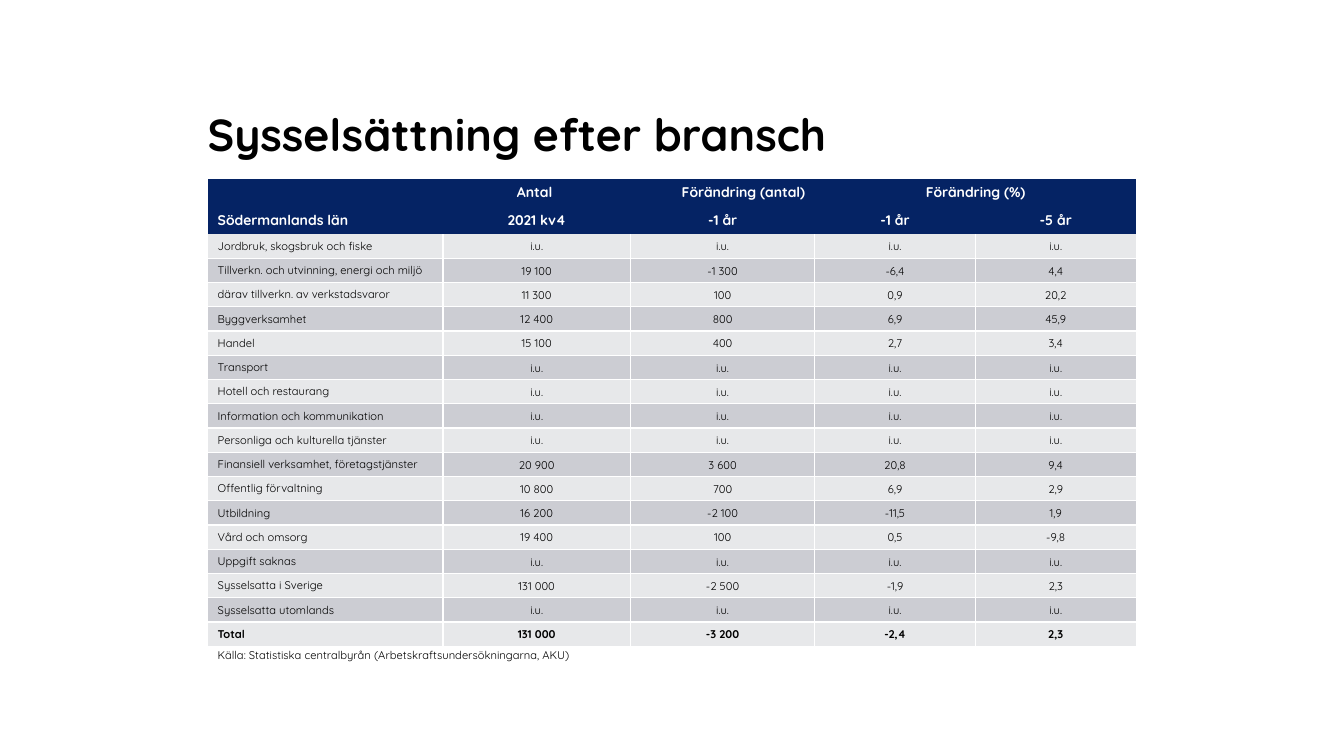
from lxml import etree
from pptx import Presentation
from pptx.dml.color import RGBColor
from pptx.enum import text as t
from pptx.oxml import ns
from pptx.util import Pt

FONT = "Quicksand"
NAVY, LIGHT, GREY = "052364", "E7E8EA", "CCCDD3"
WHITE, BLACK = "FFFFFF", "000000"
LEFT = 148.3
COLS = [168.2, 133.8, 131.8, 114.5, 115.1]
WIDTH = sum(COLS)
HEAD, BODY = 19.8, 17.32
MID, START = t.PP_ALIGN.CENTER, t.PP_ALIGN.LEFT
NONE = ["i.u."] * 4
ROWS = [
    ["", "Antal\tFörändring (antal)", "", "Förändring (%)", ""],
    ["Södermanlands län", "2021 kv4", "-1 år", "-1 år", "-5 år"],
    ["Jordbruk, skogsbruk och fiske", *NONE],
    ["Tillverkn. och utvinning, energi och miljö", "19 100", "-1 300", "-6,4", "4,4"],
    ["därav tillverkn. av verkstadsvaror", "11 300", "100", "0,9", "20,2"],
    ["Byggverksamhet", "12 400", "800", "6,9", "45,9"],
    ["Handel", "15 100", "400", "2,7", "3,4"],
    ["Transport", *NONE],
    ["Hotell och restaurang", *NONE],
    ["Information och kommunikation", *NONE],
    ["Personliga och kulturella tjänster", *NONE],
    ["Finansiell verksamhet, företagstjänster", "20 900", "3 600", "20,8", "9,4"],
    ["Offentlig förvaltning", "10 800", "700", "6,9", "2,9"],
    ["Utbildning", "16 200", "-2 100", "-11,5", "1,9"],
    ["Vård och omsorg", "19 400", "100", "0,5", "-9,8"],
    ["Uppgift saknas", *NONE],
    ["Sysselsatta i Sverige", "131 000", "-2 500", "-1,9", "2,3"],
    ["Sysselsatta utomlands", *NONE],
    ["Total", "131 000", "-3 200", "-2,4", "2,3"],
]


def color(code):
    return RGBColor.from_string(code)


def assign(item, values):
    for key, value in values.items():
        setattr(item, key, value)


def write(frame, words, size, code=BLACK, bold=False, align=START):
    para = frame.paragraphs[0]
    para.alignment = align
    if words:
        run = para.add_run()
        run.text = words
        assign(run.font, {"name": FONT, "size": Pt(size), "bold": bold})
        run.font.color.rgb = color(code)
    else:
        end = etree.SubElement(para._p, ns.qn("a:endParaRPr"))
        end.set("sz", str(size * 100))


def border(cell, sides, code=None):
    props = cell._tc.get_or_add_tcPr()
    for side in sides:
        line = etree.SubElement(props, ns.qn("a:ln" + side))
        line.set("w", str(Pt(1)))
        if code:
            fill = etree.SubElement(line, ns.qn("a:solidFill"))
            etree.SubElement(fill, ns.qn("a:srgbClr")).set("val", code)
        else:
            etree.SubElement(line, ns.qn("a:noFill"))


def add_tab(para, place):
    tabs = etree.SubElement(para._p.get_or_add_pPr(), ns.qn("a:tabLst"))
    stop = etree.SubElement(tabs, ns.qn("a:tab"))
    stop.set("pos", str(Pt(place)))
    stop.set("algn", "l")


def style(cell, row, col, words):
    head = row < 2
    if head:
        border(cell, "LRTB")
    else:
        border(cell, "LR", WHITE)
        border(cell, "T", None if row == 2 else WHITE)
        border(cell, "B", WHITE)
    cell.fill.solid()
    cell.fill.fore_color.rgb = color(NAVY if head else (LIGHT, GREY)[row % 2])
    if row and col:
        assign(cell, {
            "margin_left": Pt(0.7), "margin_right": Pt(0.7),
            "margin_top": Pt(0.7), "margin_bottom": 0,
            "vertical_anchor": t.MSO_ANCHOR.MIDDLE,
        })
    write(cell.text_frame, words, 10 if head else 8, WHITE if head else BLACK,
          head or row == len(ROWS) - 1, MID if col else START)


def add_grid(slide):
    high = 2 * HEAD + (len(ROWS) - 2) * BODY
    grid = slide.shapes.add_table(len(ROWS), len(COLS), Pt(LEFT), Pt(127.6),
                                  Pt(WIDTH), Pt(high)).table
    assign(grid, {"first_row": False, "horz_banding": False})
    for col, wide in enumerate(COLS):
        grid.columns[col].width = Pt(wide)
    for row, line in enumerate(ROWS):
        grid.rows[row].height = Pt(HEAD if row < 2 else BODY)
        for col, words in enumerate(line):
            style(grid.cell(row, col), row, col, words)
    for col in (1, 3):
        grid.cell(0, col).merge(grid.cell(0, col + 1))
    count = grid.cell(0, 1)
    assign(count, {"margin_left": Pt(52.8), "margin_right": 0})
    para = count.text_frame.paragraphs[0]
    para.alignment = START
    add_tab(para, 117.7)


def add_title(slide, words):
    title = slide.shapes.title
    assign(title, {"left": Pt(LEFT), "top": Pt(26.6),
                   "width": Pt(WIDTH), "height": Pt(87.8)})
    frame = title.text_frame
    assign(frame, {
        "margin_left": 0, "margin_right": 0, "margin_top": 0, "margin_bottom": 0,
        "vertical_anchor": t.MSO_ANCHOR.BOTTOM, "word_wrap": True,
        "auto_size": t.MSO_AUTO_SIZE.NONE,
    })
    write(frame, words, 32, bold=True)


def add_note(slide, words):
    note = slide.shapes.add_textbox(Pt(LEFT), Pt(459.4), Pt(273.6), Pt(17.3))
    assign(note.text_frame, {"word_wrap": False,
                             "auto_size": t.MSO_AUTO_SIZE.SHAPE_TO_FIT_TEXT})
    write(note.text_frame, words, 8)


def main():
    deck = Presentation()
    assign(deck, {"slide_width": Pt(960), "slide_height": Pt(540)})
    slide = deck.slides.add_slide(deck.slide_layouts[5])
    add_title(slide, "Sysselsättning efter bransch")
    add_grid(slide)
    add_note(slide, "Källa: Statistiska centralbyrån (Arbetskraftsundersökningarna, AKU)")
    deck.save("out.pptx")


if __name__ == "__main__":
    main()
